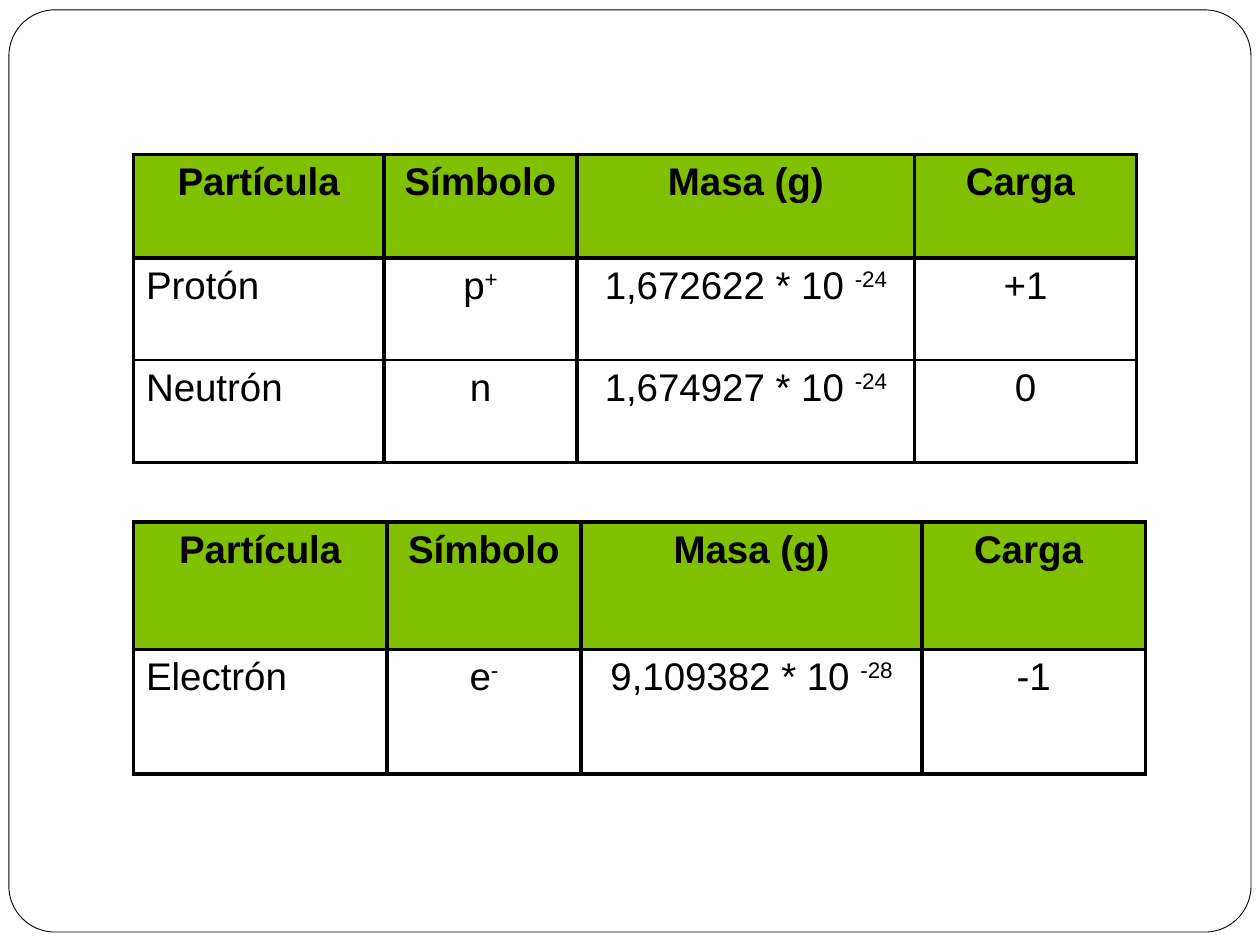
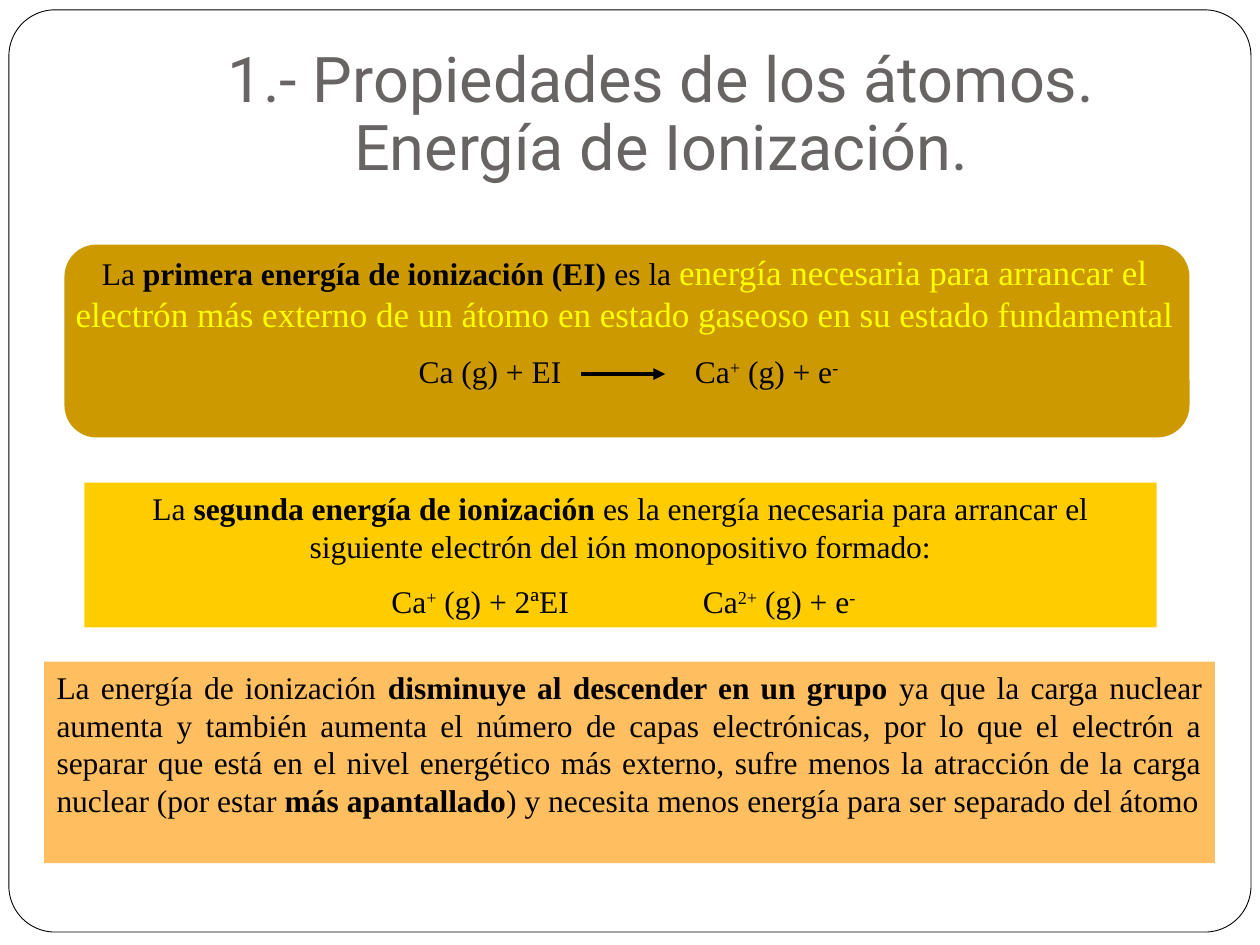
"""Builds two slides on atomic particles and ionization energy."""
from typing import NamedTuple, Optional

import pptx
import pptx.chart.data
import pptx.dml.color
import pptx.enum.shapes
import pptx.enum.text
import pptx.oxml
import pptx.oxml.ns
import pptx.util
from lxml import etree

Cm = pptx.util.Cm
Pt = pptx.util.Pt
Align = pptx.enum.text.PP_ALIGN
Anchor = pptx.enum.text.MSO_ANCHOR
Kind = pptx.enum.shapes.MSO_SHAPE
qn = pptx.oxml.ns.qn

BLACK, WHITE, GREEN, GREY = "000000", "FFFFFF", "80C000", "696464"
OCHRE, GOLD, PEACH, YELLOW = "CC9900", "FFCC00", "FFBE5F", "FFFF00"
SERIF, SANS, HEAD = "Times New Roman", "Arial", "Roboto"


class Box(NamedTuple):
    """Place and size in centimetres."""
    left: float
    top: float
    width: float
    height: float

    def lengths(self) -> list:
        """Return the four values as lengths."""
        return [Cm(value) for value in self]


class Bit(NamedTuple):
    """One run of text."""
    text: str
    bold: bool = False
    up: bool = False
    hue: str = BLACK
    size: float = 18


class Para(NamedTuple):
    """One paragraph of runs."""
    bits: list
    align: Optional[int] = Align.CENTER
    tabs: tuple = ()
    gap: float = 0


class Card(NamedTuple):
    """A filled box of text."""
    box: Box
    fill: Optional[str]
    paras: list


class Grid(NamedTuple):
    """A table of particles."""
    left: float
    top: float
    cols: list
    rows: list
    body: list
    thin: bool


def tint(text: str):
    """Turn a hex string into a colour."""
    return pptx.dml.color.RGBColor.from_string(text)


def add_bit(para, bit: Bit, face: str) -> None:
    """Add one run to a paragraph."""
    run = para.add_run()
    run.text = bit.text
    font = run.font
    font.name, font.size, font.bold = face, Pt(bit.size), bit.bold
    font.color.rgb = tint(bit.hue)
    if bit.up:
        run._r.get_or_add_rPr().set("baseline", "30000")


def add_para(para, data: Para, face: str) -> None:
    """Fill one paragraph with its runs and tab stops."""
    para.alignment = data.align
    para.space_before = Pt(data.gap)
    if data.tabs:
        stops = etree.SubElement(para._p.get_or_add_pPr(), qn("a:tabLst"))
        for stop in data.tabs:
            etree.SubElement(stops, qn("a:tab"), pos=str(Cm(stop)), algn="l")
    for bit in data.bits:
        add_bit(para, bit, face)


def add_shape(slide, kind: int, box: Box, fill: str, line: Optional[str] = None):
    """Add a flat shape."""
    shape = slide.shapes.add_shape(kind, *box.lengths())
    shape.shadow.inherit = False
    shape.fill.solid()
    shape.fill.fore_color.rgb = tint(fill)
    if line:
        shape.line.color.rgb = tint(line)
        shape.line.width = Pt(0.5)
    else:
        shape.line.fill.background()
    return shape


def add_card(slide, card: Card) -> None:
    """Add a box of text, filled or clear."""
    if card.fill:
        shape = add_shape(slide, Kind.RECTANGLE, card.box, card.fill)
    else:
        shape = slide.shapes.add_textbox(*card.box.lengths())
    frame = shape.text_frame
    frame.word_wrap = True
    frame.vertical_anchor = Anchor.TOP
    for spot, data in enumerate(card.paras):
        para = frame.add_paragraph() if spot else frame.paragraphs[0]
        add_para(para, data, SERIF)


def add_title(slide, lines: list) -> None:
    """Add the title, one run a line."""
    box = Box(2.54, 0.76, 21.59, 3.18)
    frame = slide.shapes.add_textbox(*box.lengths()).text_frame
    frame.word_wrap = True
    frame.vertical_anchor = Anchor.MIDDLE
    para = frame.paragraphs[0]
    para.alignment, para.line_spacing = Align.CENTER, 0.9
    for spot, line in enumerate(lines):
        if spot:
            para.add_line_break()
        add_bit(para, Bit(line, hue=GREY, size=36), HEAD)


def add_arrow(slide, left: float, right: float, top: float) -> None:
    """Add a level arrow that points right."""
    line = slide.shapes.add_connector(
        pptx.enum.shapes.MSO_CONNECTOR.STRAIGHT, Cm(left), Cm(top), Cm(right), Cm(top))
    line.line.color.rgb = tint(BLACK)
    line.line.width = Pt(2.25)
    etree.SubElement(line.line._get_or_add_ln(), qn("a:tailEnd"), type="triangle")
    etree.SubElement(line._element.spPr, qn("a:effectLst"))


def add_edge(cell, side: str, width: float) -> None:
    """Draw one border of a cell."""
    edge = etree.SubElement(
        cell._tc.get_or_add_tcPr(), qn(f"a:ln{side}"), w=str(Pt(width)))
    fill = etree.SubElement(edge, qn("a:solidFill"))
    etree.SubElement(fill, qn("a:srgbClr"), val=BLACK)


def add_cell(cell, bits: list, head: bool, align: int, edges: dict) -> None:
    """Fill one cell of a table."""
    for side, width in edges.items():
        add_edge(cell, side, width)
    if head:
        cell.fill.solid()
        cell.fill.fore_color.rgb = tint(GREEN)
    else:
        cell.fill.background()
    add_para(cell.text_frame.paragraphs[0], Para(bits, align), SANS)


def add_grid(slide, grid: Grid) -> None:
    """Add a table of particles under its green head."""
    box = Box(grid.left, grid.top, sum(grid.cols), sum(grid.rows))
    table = slide.shapes.add_table(
        len(grid.rows), len(grid.cols), *box.lengths()).table
    table.first_row = table.horz_banding = False
    for col, width in zip(table.columns, grid.cols):
        col.width = Cm(width)
    for row, height in zip(table.rows, grid.rows):
        row.height = Cm(height)
    head = [(name, "") for name in ("Partícula", "Símbolo", "Masa (g)", "Carga ")]
    last = len(grid.rows) - 1
    for r, texts in enumerate([head] + grid.body):
        edges = {"L": 2.25, "R": 2.25,
                 "T": 1 if grid.thin and r > 1 else 2.25,
                 "B": 1 if grid.thin and 0 < r < last else 2.25}
        for c, (text, power) in enumerate(texts):
            bits = [Bit(text, bold=r == 0, size=22)]
            if power:
                bits.append(Bit(power, up=True, size=22))
            align = Align.LEFT if r and c == 0 else Align.CENTER
            add_cell(table.cell(r, c), bits, r == 0, align, edges)


def add_slide(deck):
    """Add a blank slide with its round frame."""
    slide = deck.slides.add_slide(deck.slide_layouts[6])
    frame = add_shape(
        slide, Kind.ROUNDED_RECTANGLE, Box(0.18, 0.2, 25.04, 18.59), WHITE, BLACK)
    frame.adjustments[0] = 0.05
    return slide


GRIDS = [
    Grid(2.69, 3.12, [5.05, 3.89, 6.81, 4.47], [2.08, 2.06, 2.06], [
        [("Protón", ""), ("p", "+"), ("1,672622 * 10 ", "-24"), ("+1", "")],
        [("Neutrón", ""), ("n", ""), ("1,674927 * 10 ", "-24"), ("0", "")],
    ], True),
    Grid(2.69, 10.52, [5.11, 3.91, 6.88, 4.5], [2.57, 2.51], [
        [("Electrón", ""), ("e", "-"), ("9,109382 * 10 ", "-28"), ("-1", "")],
    ], False),
]

CARDS = [
    Card(Box(1.09, 4.93, 23.01, 3.94), None, [
        Para([Bit("La "), Bit("primera energía de ionización (EI)", True),
              Bit(" es la "),
              Bit("energía necesaria para arrancar el electrón más externo de un "
                  "átomo en estado gaseoso en su estado fundamental",
                  hue=YELLOW, size=20)]),
        Para([Bit("\tCa (g) + EI\tCa"), Bit("+", up=True), Bit(" (g) + e"),
              Bit("-", up=True)], Align.LEFT, (7.1, 12.67), 10),
    ]),
    Card(Box(1.7, 9.73, 21.62, 2.92), GOLD, [
        Para([Bit("La "), Bit("segunda energía de ionización", True),
              Bit(" es la energía necesaria para arrancar el siguiente electrón "
                  "del ión monopositivo formado:")]),
        Para([Bit("\tCa"), Bit("+", up=True), Bit(" (g) + 2ªEI\tCa"),
              Bit("2+", up=True), Bit(" (g) + e"), Bit("-", up=True)],
             Align.LEFT, (5.94, 12.22), 10),
    ]),
    Card(Box(0.89, 13.34, 23.6, 4.06), PEACH, [
        Para([Bit("La energía de ionización "),
              Bit("disminuye al descender en un grupo", True),
              Bit(" ya que la carga nuclear aumenta y también aumenta el número de "
                  "capas electrónicas, por lo que el electrón a separar que está en "
                  "el nivel energético más externo, sufre menos la atracción de la "
                  "carga nuclear (por estar "),
              Bit("más apantallado", True),
              Bit(") y necesita menos energía para ser separado del átomo")],
             Align.JUSTIFY),
    ]),
]


def main() -> None:
    """Build both slides and save them."""
    deck = pptx.Presentation()
    deck.slide_width, deck.slide_height = Cm(25.4), Cm(19.05)

    slide = add_slide(deck)
    for grid in GRIDS:
        add_grid(slide, grid)

    slide = add_slide(deck)
    add_shape(slide, Kind.ROUNDED_RECTANGLE, Box(1.3, 4.93, 22.68, 3.89), OCHRE)
    for card in CARDS:
        add_card(slide, card)
    add_arrow(slide, 11.71, 13.41, 7.54)
    add_title(slide, ["1.- Propiedades de los átomos.", "Energía de Ionización."])
    deck.save("out.pptx")


if __name__ == "__main__":
    main()
